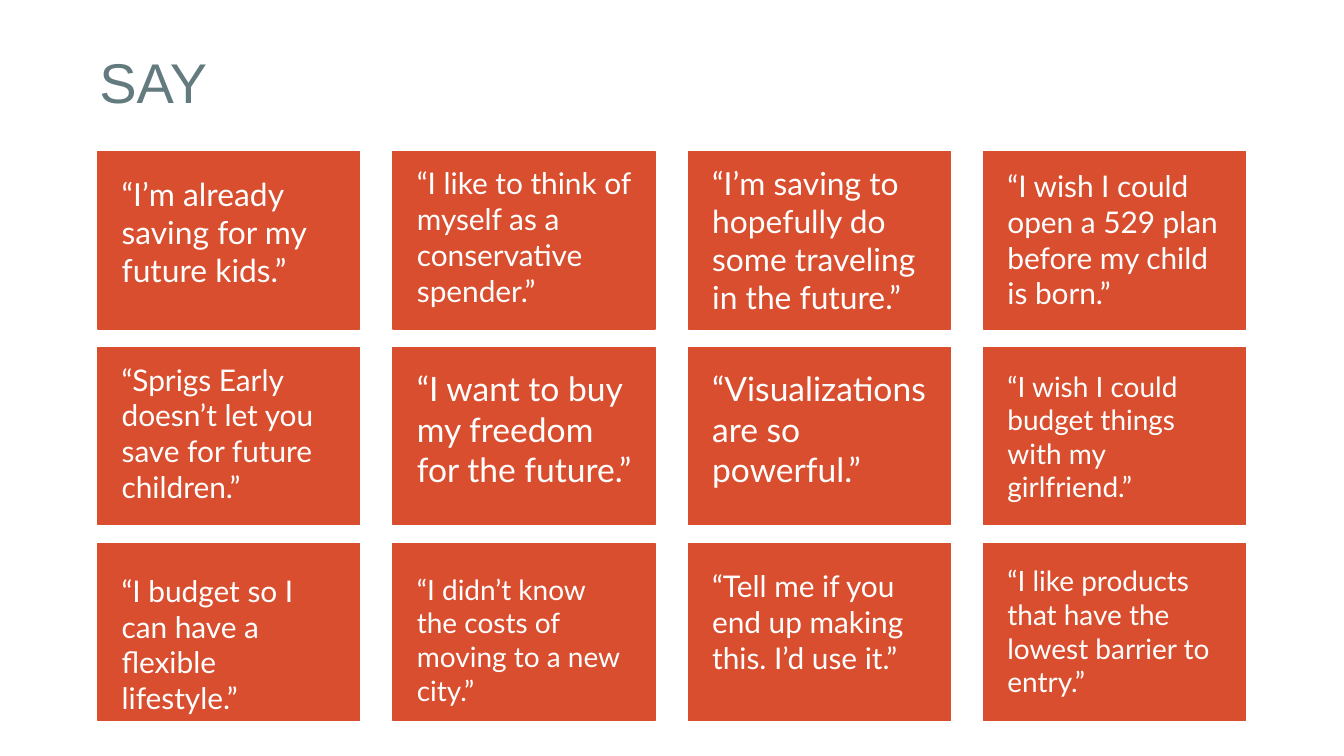
from pptx import Presentation
from pptx import util as u
from pptx.dml.color import RGBColor
from pptx.enum import shapes, text

ORANGE = RGBColor(0xD8, 0x4E, 0x2E)
SLATE = RGBColor(0x63, 0x7B, 0x7F)
WHITE = RGBColor(0xFF, 0xFF, 0xFF)

# Card grid, in centimetres
LEFT, TOP = 1.85, 2.87
CARD_W, CARD_H = 4.95, 3.35
STEP_X, STEP_Y = 5.58, 3.7
QUOTE_INDENT, QUOTE_W = 0.2, 4.57

# Rows of cards: quote, font size, drop below the card top, box height
QUOTES = [
    [("“I’m already saving for my future kids.”", 17, 0.18, 3.07),
     ("“I like to think of myself as a conservative spender.”", 16, 0, 3.35),
     ("“I’m saving to hopefully do some traveling in the future.”", 17, -0.03, 3.07),
     ("“I wish I could open a 529 plan before my child is born.”", 16, 0.05, 2.9)],
    [("“Sprigs Early doesn’t let you save for future children.”", 16, 0.01, 3.07),
     ("“I want to buy my freedom for the future.”", 18, 0.14, 3.07),
     ("“Visualizations are so powerful.”", 18, 0.14, 3.07),
     ("“I wish I could budget things with my girlfriend.”", 15, 0.16, 3.07)],
    [("“I budget so I can have a flexible lifestyle.”", 16, 0.3, 2.67),
     ("“I didn’t know the costs of moving to a new city.”", 15, 0.3, 2.67),
     ("“Tell me if you end up making this. I’d use it.”", 16, 0.22, 3.07),
     ("“I like products that have the lowest barrier to entry.”", 15, 0.14, 3.07)],
]


class Board:
    inset = u.Cm(0.25)

    def __init__(self, page):
        self.page = page

    def card(self, left, top):
        box = self.page.shapes.add_shape(
            shapes.MSO_SHAPE.RECTANGLE,
            u.Cm(left), u.Cm(top), u.Cm(CARD_W), u.Cm(CARD_H))
        box.shadow.inherit = False
        box.fill.solid()
        box.fill.fore_color.rgb = ORANGE
        box.line.color.rgb = ORANGE
        box.line.width = u.Pt(0.75)

    def label(self, words, left, top, width, height, size, font, color, after=0):
        box = self.page.shapes.add_textbox(
            u.Cm(left), u.Cm(top), u.Cm(width), u.Cm(height))
        frame = box.text_frame
        frame.text = words
        frame.word_wrap = True
        frame.vertical_anchor = text.MSO_ANCHOR.TOP
        frame.margin_left = frame.margin_right = self.inset
        frame.margin_top = frame.margin_bottom = self.inset
        para = frame.paragraphs[0]
        para.space_after = u.Pt(after)
        span = para.runs[0]
        span.font.size = u.Pt(size)
        span.font.name = font
        span.font.color.rgb = color


def main():
    deck = Presentation()
    deck.slide_width, deck.slide_height = u.Cm(25.4), u.Cm(14.29)
    board = Board(deck.slides.add_slide(deck.slide_layouts[6]))

    # Title
    board.label("SAY", 1.63, 0.64, 8.31, 1.6, 30, "Arial", SLATE)

    # Quote cards
    for row, quotes in enumerate(QUOTES):
        for column, (words, size, drop, height) in enumerate(quotes):
            left, top = LEFT + column * STEP_X, TOP + row * STEP_Y
            board.card(left, top)
            board.label(words, left + QUOTE_INDENT, top + drop, QUOTE_W, height,
                        size, "Lato", WHITE, after=16)

    deck.save("out.pptx")


if __name__ == "__main__":
    main()
